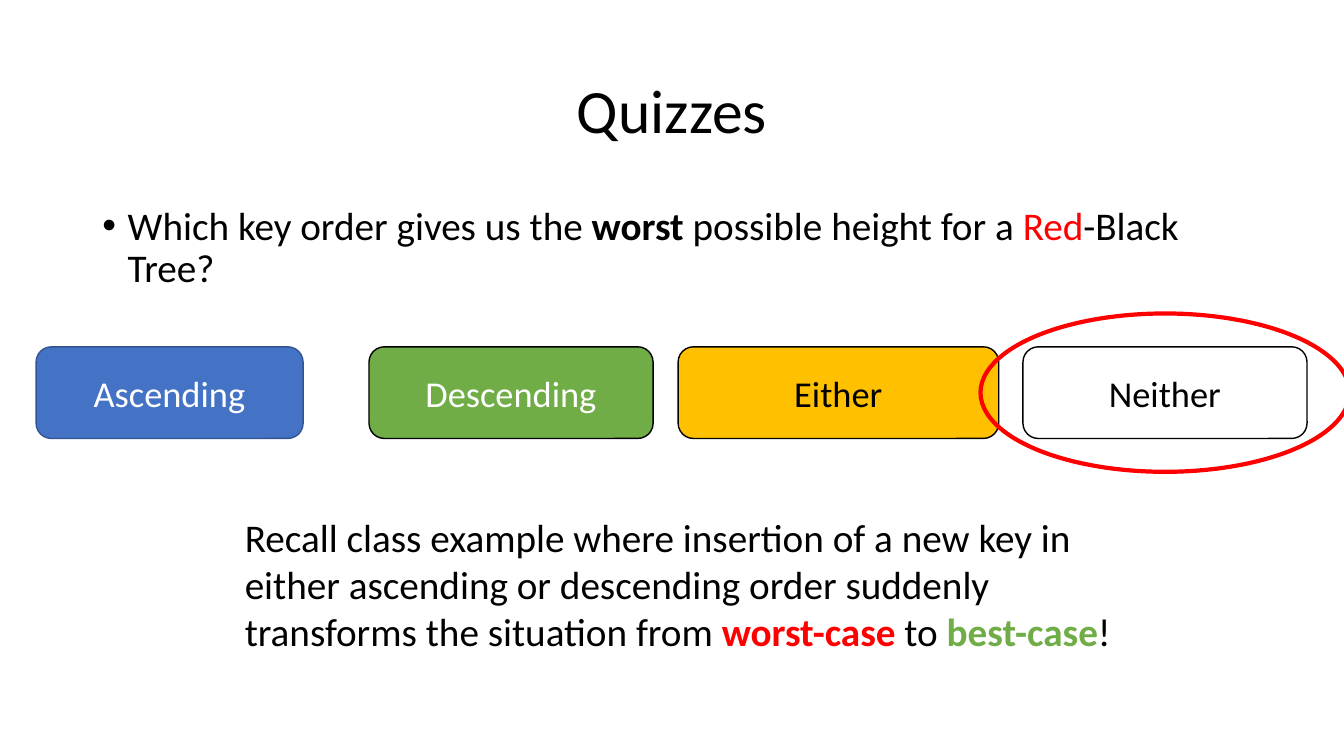
import pptx
import pptx.dml.color
import pptx.enum.shapes
import pptx.enum.text
import pptx.oxml
import pptx.oxml.ns
import pptx.util
from pptx.util import Cm

BLACK, WHITE, RED, GREEN = "000000", "FFFFFF", "FF0000", "70AD47"
SHAPES = pptx.enum.shapes.MSO_SHAPE
ANCHOR = pptx.enum.text.MSO_ANCHOR
ALIGN = pptx.enum.text.PP_ALIGN


def color(hex_string):
    return pptx.dml.color.RGBColor.from_string(hex_string)


def write(shape, runs, size=28, align=ALIGN.LEFT, anchor=ANCHOR.TOP, spacing=None):
    """Fill a shape with one paragraph of (text, colour, bold) runs."""
    frame = shape.text_frame
    frame.word_wrap = True
    frame.vertical_anchor = anchor
    paragraph = frame.paragraphs[0]
    paragraph.alignment = align
    paragraph.line_spacing = spacing
    for text, hex_string, bold in runs:
        run = paragraph.add_run()
        run.text = text
        run.font.name = "Calibri"
        run.font.size = pptx.util.Pt(size)
        run.font.bold = bold
        run.font.color.rgb = color(hex_string)
    return paragraph


presentation = pptx.Presentation()
presentation.slide_width = Cm(33.87)
presentation.slide_height = Cm(19.05)
slide = presentation.slides.add_slide(presentation.slide_layouts[6])

# Title
title = slide.shapes.add_textbox(Cm(2.33), Cm(1.01), Cm(29.21), Cm(3.68))
write(title, [("Quizzes", BLACK, False)], size=44,
      align=ALIGN.CENTER, anchor=ANCHOR.MIDDLE, spacing=0.9)

# Question with a bullet
question = slide.shapes.add_textbox(Cm(2.33), Cm(5.07), Cm(29.21), Cm(12.09))
paragraph = write(question, [
    ("Which key order gives us the ", BLACK, False),
    ("worst", BLACK, True),
    (" possible height for a", BLACK, False),
    (" Red", RED, False),
    ("-Black Tree?", BLACK, False),
], spacing=0.9)
paragraph.space_before = pptx.util.Pt(10)
properties = paragraph._p.get_or_add_pPr()
properties.set("marL", str(Cm(0.64)))
properties.set("indent", str(-Cm(0.64)))
namespace = pptx.oxml.ns.nsdecls("a")
for bullet in ('<a:buFont %s typeface="Arial"/>', '<a:buChar %s char="•"/>'):
    properties.append(pptx.oxml.parse_xml(bullet % namespace))

# Answer buttons: text, left, width, fill, line, text colour
answers = [
    ("Ascending", 0.91, 6.73, "4472C4", "325491", WHITE),
    ("Descending", 9.3, 7.16, GREEN, BLACK, WHITE),
    ("Either", 17.09, 8.08, "FFC000", BLACK, BLACK),
    ("Neither", 25.78, 7.16, WHITE, BLACK, BLACK),
]
for text, left, width, fill, line, text_color in answers:
    button = slide.shapes.add_shape(
        SHAPES.ROUNDED_RECTANGLE, Cm(left), Cm(8.74), Cm(width), Cm(2.31))
    button.shadow.inherit = False
    button.fill.solid()
    button.fill.fore_color.rgb = color(fill)
    button.line.color.rgb = color(line)
    button.line.width = pptx.util.Pt(1)
    write(button, [(text, text_color, False)], size=26,
          align=ALIGN.CENTER, anchor=ANCHOR.MIDDLE)

# Ring around the correct answer
ring = slide.shapes.add_shape(SHAPES.OVAL, Cm(24.71), Cm(7.9), Cm(9.3), Cm(3.99))
ring.shadow.inherit = False
ring.fill.background()
ring.line.color.rgb = color(RED)
ring.line.width = pptx.util.Pt(3)

# Explanation
explanation = slide.shapes.add_textbox(Cm(5.92), Cm(12.8), Cm(23.8), Cm(3.84))
write(explanation, [
    ("Recall class example where insertion of a new key in either ascending "
     "or descending order suddenly transforms the situation from ", BLACK, False),
    ("worst-case", RED, True),
    (" to ", BLACK, False),
    ("best-case", GREEN, True),
    ("!", BLACK, False),
])

presentation.save("out.pptx")
